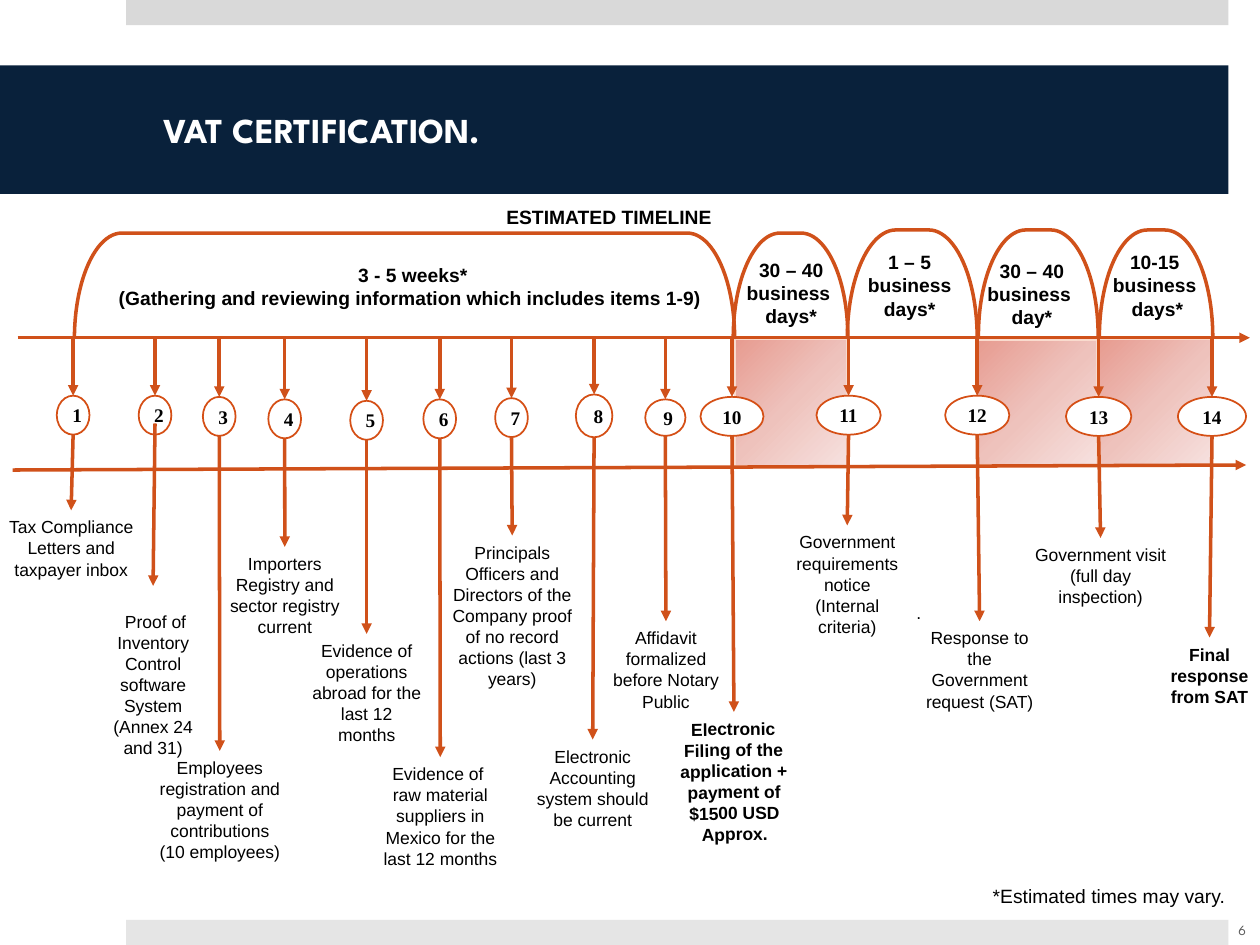
from copy import deepcopy
from dataclasses import dataclass
from typing import Optional

from lxml import etree
from pptx import Presentation
from pptx import util as u
from pptx.dml.color import RGBColor
from pptx.enum import shapes, text
from pptx.oxml.ns import qn

Pt = u.Pt
SHAPE = shapes.MSO_SHAPE
CENTER, LEFT = text.PP_ALIGN.CENTER, text.PP_ALIGN.LEFT


@dataclass(frozen=True)
class Theme:
    navy: str = "09213B"
    arrow: str = "D0511A"
    oval_line: str = "D54F15"
    band_line: str = "F9DBCE"
    band_stops: tuple = ("E79B90", "EEC2BC", "F6E1DF")
    top_bar: str = "D9D9D9"
    bottom_bar: str = "E5E5E5"
    white: str = "FFFFFF"
    black: str = "000000"
    gray: str = "595959"
    body: str = "Arial"
    heading: str = "League Spartan"
    numeral: str = "Times New Roman"
    title_size: float = 20
    caption_size: float = 11
    label_size: float = 10
    page_size: float = 8


T = Theme()
AXIS_Y = 193


@dataclass(frozen=True)
class Step:
    """One numbered stop; arrow_end is set when the stem stops short of its label."""
    number: int
    cx: float
    top: float
    label: tuple
    lines: tuple
    w: float = 18.7
    h: float = 22.3
    bold: bool = False
    rotation: float = 0
    stem_start: Optional[float] = None
    arrow_end: Optional[float] = None


@dataclass(frozen=True)
class Period:
    """A bracket over the axis, as left, top, span and rise, with its caption."""
    bracket: tuple
    caption: tuple
    lines: tuple


STEPS = [
    Step(1, 41.8, 226.1, (-2.2, 291.6, 85.7, 55.4), ("Tax Compliance Letters and taxpayer inbox",)),
    Step(2, 88.6, 226.1, (49, 345.6, 77, 92.2),
         (" Proof of Inventory", "Control software System (Annex 24 and 31)"),
         stem_start=242, arrow_end=334.8),
    Step(3, 125.3, 226.8, (83.5, 429.1, 84.2, 67.7),
         ("Employees registration and payment of contributions (10 employees)",)),
    Step(4, 162.7, 228.2, (121.7, 312.5, 82.1, 55.4),
         ("Importers Registry and sector registry current",)),
    Step(5, 209.5, 229, (170.6, 362.2, 77.8, 67.7),
         ("Evidence of operations abroad for the last 12 months",)),
    Step(6, 251.3, 228.2, (205.9, 432.7, 91.4, 67.7),
         ("Evidence of ", "raw material suppliers in Mexico for the last 12 months")),
    Step(7, 292.3, 227.5, (251.3, 306, 82.8, 92.2),
         ("Principals Officers and Directors of the Company proof of no record actions (last 3 years)",)),
    Step(8, 339.5, 225.4, (293, 422.6, 91.4, 55.4),
         ("Electronic Accounting system should be current",), w=20.9, h=24.5),
    Step(9, 380.2, 228.2, (337.7, 355, 85.7, 67.7),
         ("Affidavit formalized before Notary Public",), w=23, h=20.9),
    Step(10, 418.3, 226.8, (380.9, 406.8, 77, 79.9),
         ("Electronic Filing of the application + payment of $1500 USD Approx.",),
         w=36, bold=True, rotation=-0.8),
    Step(11, 484.9, 226.1, (447.8, 300.2, 72.7, 67.7),
         ("Government requirements", "notice (Internal criteria)"), w=36.7),
    Step(12, 558.4, 226.1, (517.7, 355, 84.2, 55.4),
         ("Response to the Government request (SAT)",), w=36.7),
    Step(13, 627.8, 226.8, (583.2, 307.4, 91.4, 43.9),
         ("Government visit (full day inspection)",), w=37.4),
    Step(14, 692.6, 226.8, (653, 364.3, 76.3, 43.9),
         ("Final response from SAT",), w=38.9, bold=True),
]

PERIODS = [
    Period((42.5, 133.2, 377.3, 60.5), (49.7, 146.9, 369.4, 33.8),
           (" 3 - 5 weeks*", "(Gathering and reviewing information which includes items 1-9)")),
    Period((419, 133.2, 65.5, 59.8), (417.6, 144, 69.1, 47.5), ("30 – 40 business ", "days*")),
    Period((484.2, 131.4, 74.2, 61.9), (486.7, 139.7, 66.2, 47.5), ("1 – 5 business days*",)),
    Period((559.1, 131.4, 68.4, 60.5), (553.7, 144.7, 72, 47.5), ("30 – 40 business ", "day*")),
    Period((628.2, 131.4, 64.8, 61.2), (610.6, 139.7, 101.5, 47.5), ("10-15 ", "business ", "days*")),
]

BANDS = [(558, 194.4, 69.1, 71.3), (627.8, 193.7, 64.8, 72.7), (419.8, 193.7, 64.1, 72.7)]


def rgb(value: str) -> RGBColor:
    return RGBColor.from_string(value)


def write(tf, lines: tuple, size: float, font: str = T.body, color: str = T.black,
          bold: bool = False, align=CENTER) -> None:
    tf.word_wrap = True
    for i, line in enumerate(lines):
        p = tf.paragraphs[0] if i == 0 else tf.add_paragraph()
        p.alignment = align
        r = p.add_run()
        r.text = line
        r.font.name, r.font.size, r.font.bold = font, Pt(size), bold
        r.font.color.rgb = rgb(color)


def add_text(s, box: tuple, lines: tuple, size: float, **style):
    sp = s.shapes.add_textbox(*map(Pt, box))
    write(sp.text_frame, lines, size, **style)
    return sp


def add_shape(s, kind, box: tuple, fill: Optional[str] = None,
              line: Optional[str] = None, width: float = 1):
    sp = s.shapes.add_shape(kind, *map(Pt, box))
    sp.shadow.inherit = False
    if fill:
        sp.fill.solid()
        sp.fill.fore_color.rgb = rgb(fill)
    else:
        sp.fill.background()
    if line:
        sp.line.color.rgb = rgb(line)
        sp.line.width = Pt(width)
    else:
        sp.line.fill.background()
    return sp


def add_arrow(s, x1: float, y1: float, x2: float, y2: float):
    c = s.shapes.add_connector(shapes.MSO_CONNECTOR.STRAIGHT, *map(Pt, (x1, y1, x2, y2)))
    c.line.color.rgb = rgb(T.arrow)
    c.line.width = Pt(2)
    etree.SubElement(c.line._get_or_add_ln(), qn("a:tailEnd"), type="triangle")
    etree.SubElement(c._element.spPr, qn("a:effectLst"))
    return c


def add_band(s, box: tuple) -> None:
    sp = add_shape(s, SHAPE.RECTANGLE, box, line=T.band_line)
    sp.fill.gradient()
    sp.fill.gradient_angle = 315
    first = sp._element.spPr.find(".//" + qn("a:gs"))
    first.addnext(deepcopy(first))
    for i, (stop, color) in enumerate(zip(sp.fill.gradient_stops, T.band_stops)):
        stop.color.rgb = rgb(color)
        stop.position = i / 2


def add_period(s, period: Period) -> None:
    left, top, span, rise = period.bracket
    box = (left + (span - rise) / 2, top + (rise - span) / 2, rise, span)
    sp = add_shape(s, SHAPE.LEFT_BRACKET, box, line=T.arrow, width=2)
    sp.rotation = 90
    sp.adjustments[0] = 0.448
    add_text(s, period.caption, period.lines, T.caption_size, bold=True)


def add_step(s, step: Step) -> None:
    oval = add_shape(s, SHAPE.OVAL, (step.cx - step.w / 2, step.top, step.w, step.h),
                     T.white, T.oval_line)
    oval.text_frame.vertical_anchor = text.MSO_ANCHOR.MIDDLE
    write(oval.text_frame, (str(step.number),), T.caption_size, font=T.numeral, bold=True)
    label = add_text(s, step.label, step.lines, T.label_size, bold=step.bold)
    label.rotation = step.rotation
    add_arrow(s, step.cx, AXIS_Y, step.cx, step.top).end_connect(oval, 0)
    x, y, w, _ = step.label
    start = step.stem_start or step.top + step.h
    stem = add_arrow(s, step.cx, start, x + w / 2, step.arrow_end or y)
    if step.arrow_end is None:
        stem.end_connect(label, 0)


def main() -> None:
    prs = Presentation()
    prs.slide_width, prs.slide_height = Pt(720), Pt(540)
    s = prs.slides.add_slide(prs.slide_layouts[6])

    add_shape(s, SHAPE.RECTANGLE, (72, 0, 630, 14.4), T.top_bar)
    add_shape(s, SHAPE.RECTANGLE, (72, 525.6, 630, 14.4), T.bottom_bar)
    for box in BANDS:
        add_band(s, box)
    title = add_shape(s, SHAPE.RECTANGLE, (0, 37.4, 702, 73.4), T.navy)
    title.text_frame.margin_left = Pt(93.6)
    title.text_frame.vertical_anchor = text.MSO_ANCHOR.MIDDLE
    write(title.text_frame, ("VAT CERTIFICATION.",), T.title_size, font=T.heading,
          color=T.white, bold=True, align=LEFT)

    add_text(s, (165.6, 113.8, 365, 20.9), ("ESTIMATED TIMELINE",), T.caption_size, bold=True)
    add_arrow(s, 10.1, AXIS_Y, 714.2, AXIS_Y)
    add_arrow(s, 7.2, 268.6, 712.1, 265.7)
    for period in PERIODS:
        add_period(s, period)
    for step in STEPS:
        add_step(s, step)

    for left, top in ((481, 340.6), (576, 326.2)):
        add_text(s, (left, top, 90.7, 19.4), (". ",), T.label_size)
    add_text(s, (560.2, 501.8, 172.8, 20.9), ("*Estimated times may vary.",),
             T.caption_size, align=LEFT)
    page = add_text(s, (691.9, 517, 36, 28.8), ("6",), T.page_size, font=T.heading, color=T.gray)
    page.text_frame.vertical_anchor = text.MSO_ANCHOR.MIDDLE
    prs.save("out.pptx")


if __name__ == "__main__":
    main()
